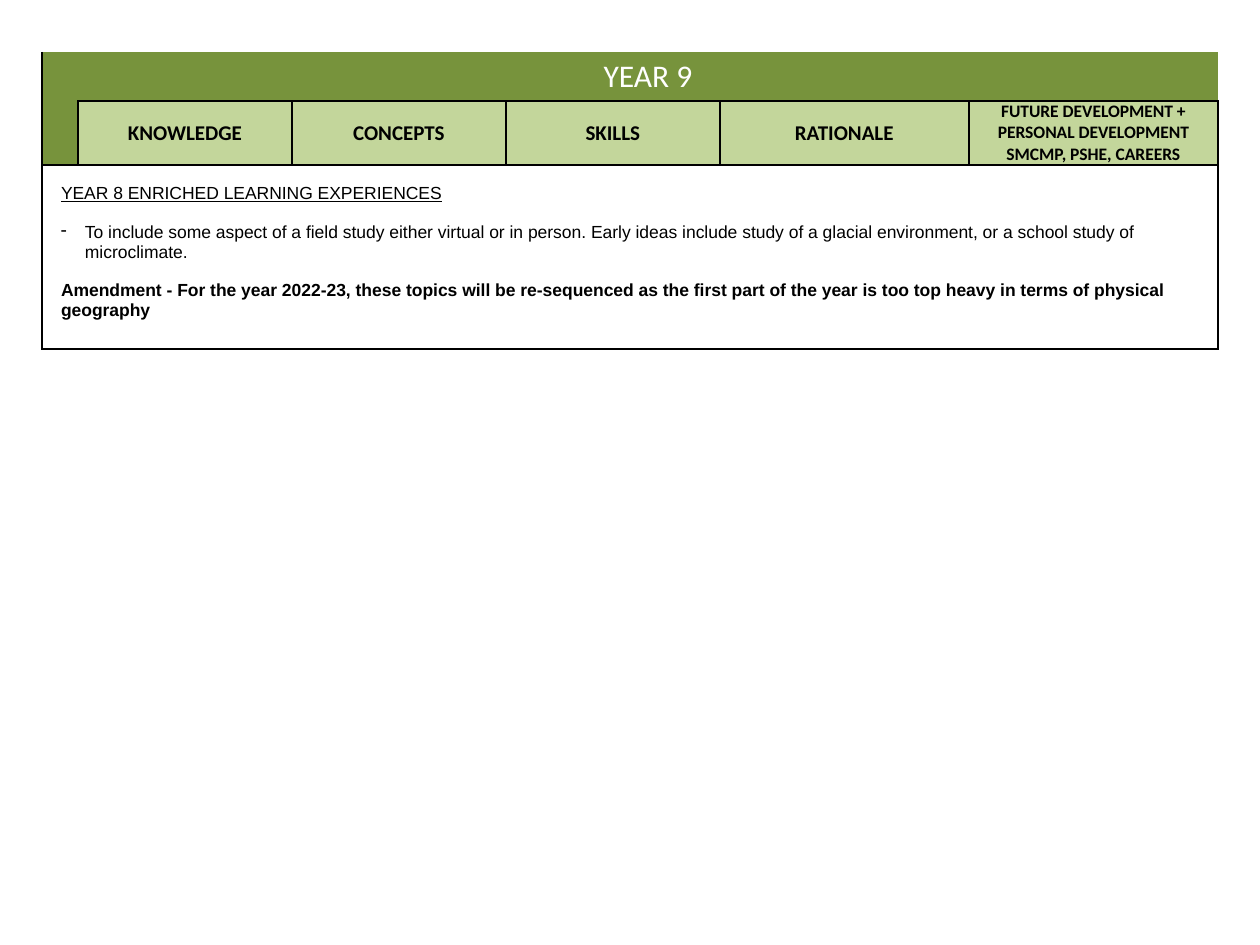
from lxml import etree
from pptx import Presentation
from pptx.dml.color import RGBColor
from pptx.enum.text import MSO_ANCHOR, PP_ALIGN
from pptx.oxml.ns import qn
from pptx.util import Pt

PX = 914400 // 126
CENTER, LEFT = PP_ALIGN.CENTER, PP_ALIGN.LEFT
MIDDLE, TOP = MSO_ANCHOR.MIDDLE, MSO_ANCHOR.TOP
DARK, LIGHT, WHITE, BLACK = "77933C", "C3D69B", "FFFFFF", "000000"
NO_STYLE = "{2D5ABB26-0587-4C30-8999-92F81FD0307C}"


def format_cell(cell, fill, edges, anchor=MIDDLE, top=0):
    cell.margin_left = cell.margin_right = 9 * PX
    cell.margin_top, cell.margin_bottom = top * PX, 0
    cell.vertical_anchor = anchor
    tcPr = cell._tc.get_or_add_tcPr()
    for edge in edges:
        ln = etree.SubElement(tcPr, qn("a:ln" + edge), w=str(Pt(1)))
        solid = etree.SubElement(ln, qn("a:solidFill"))
        etree.SubElement(solid, qn("a:srgbClr"), val=BLACK)
    cell.fill.solid()
    cell.fill.fore_color.rgb = RGBColor.from_string(fill)


def write(p, text, size=10, font="Calibri", color=BLACK, bold=False,
          underline=False, align=CENTER, before=0):
    p.alignment = align
    p.space_before = Pt(before)
    r = p.add_run()
    r.text = text
    r.font.size = Pt(size)
    r.font.name = font
    r.font.bold = bold
    r.font.underline = underline
    r.font.color.rgb = RGBColor.from_string(color)


prs = Presentation()
prs.slide_width, prs.slide_height = 1260 * PX, 945 * PX
s = prs.slides.add_slide(prs.slide_layouts[6])

# Table grid
widths = [36, 214, 214, 214, 249, 249]
heights = [49, 64, 184]
table = s.shapes.add_table(3, 6, 42 * PX, 52 * PX,
                           sum(widths) * PX, sum(heights) * PX).table
table._tbl.tblPr.find(qn("a:tableStyleId")).text = NO_STYLE
for column, width in zip(table.columns, widths):
    column.width = width * PX
for row, height in zip(table.rows, heights):
    row.height = height * PX

# Side band and year title
table.cell(0, 0).merge(table.cell(1, 0))
table.cell(0, 1).merge(table.cell(0, 5))
for i in range(2):
    format_cell(table.cell(i, 0), DARK, "LB" if i else "L")
for j in range(1, 6):
    format_cell(table.cell(0, j), DARK, "RB" if j == 5 else "B")
write(table.cell(0, 1).text_frame.paragraphs[0], "YEAR 9", size=18, color=WHITE)

# Column headings
headings = [
    ("KNOWLEDGE", 12), ("CONCEPTS", 12), ("SKILLS", 12), ("RATIONALE", 12),
    ("FUTURE DEVELOPMENT + PERSONAL DEVELOPMENT SMCMP, PSHE, CAREERS", 10),
]
for j, (text, size) in enumerate(headings, 1):
    cell = table.cell(1, j)
    format_cell(cell, LIGHT, "LRTB")
    write(cell.text_frame.paragraphs[0], text, size=size, bold=True)

# Enriched learning notes
table.cell(2, 0).merge(table.cell(2, 5))
for j in range(6):
    format_cell(table.cell(2, j), WHITE, "LRTB", anchor=TOP, top=19)
notes = [
    ("YEAR 8 ENRICHED LEARNING EXPERIENCES", dict(underline=True), 10, 0),
    ("To include some aspect of a field study either virtual or in person. "
     "Early ideas include study of a glacial environment, or a school study "
     "of microclimate.", dict(before=11), 34, -24),
    ("Amendment - For the year 2022-23, these topics will be re-sequenced as "
     "the first part of the year is too top heavy in terms of physical "
     "geography", dict(bold=True, before=11), 10, 0),
]
tf = table.cell(2, 0).text_frame
for i, (text, style, margin, indent) in enumerate(notes):
    p = tf.add_paragraph() if i else tf.paragraphs[0]
    write(p, text, font="Arial", align=LEFT, **style)
    pPr = p._p.get_or_add_pPr()
    pPr.set("marL", str(margin * PX))
    pPr.set("indent", str(indent * PX))
    if indent:
        etree.SubElement(pPr, qn("a:buChar"), char="-")

prs.save("out.pptx")
